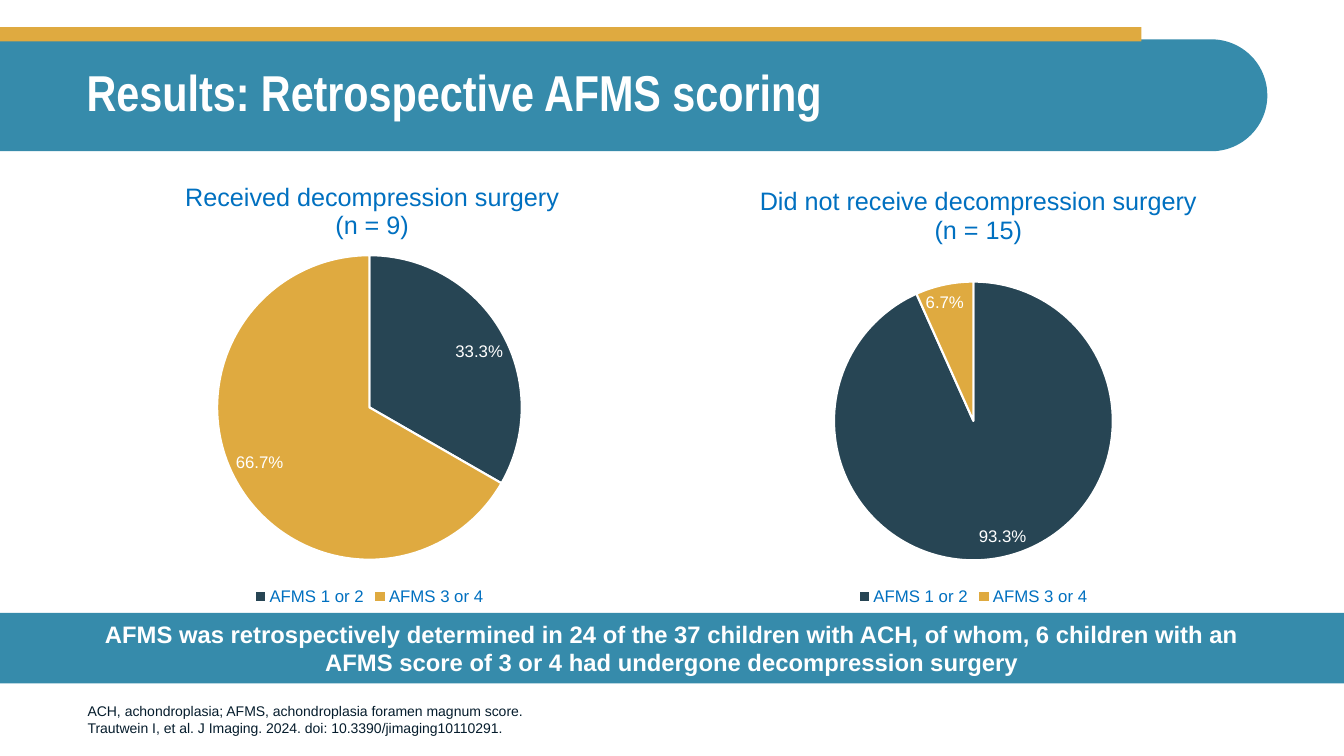
from lxml import etree
from pptx import Presentation
from pptx.chart.data import CategoryChartData
from pptx.dml.color import RGBColor
from pptx.enum import chart as charts, shapes, text
from pptx.oxml.ns import qn
from pptx.util import Pt

# Content
TITLE = "Results: Retrospective AFMS scoring"
CATS = ["AFMS 1 or 2", "AFMS 3 or 4"]
# left edge, title lines, values, title (x, y), pie (x, y, w, h) as shares of the chart
PIES = [
    (76, ["Received decompression surgery", "(n = 9)"], [0.333, 0.667],
     (0.18, 0.04), (0.24, 0.21, 0.52, 0.68)),
    (675, ["Did not receive decompression surgery", "(n = 15)"], [0.933, 0.067],
     (0.13, 0.05), (0.26, 0.27, 0.48, 0.62)),
]
BAND = ("AFMS was retrospectively determined in 24 of the 37 children with ACH, "
        "of whom, 6 children with an AFMS score of 3 or 4 had undergone "
        "decompression surgery")
NOTES = ["ACH, achondroplasia; AFMS, achondroplasia foramen magnum score.",
         "Trautwein I, et al. J Imaging. 2024. doi: 10.3390/jimaging10110291."]
TEAL, GOLD, NAVY = "368BAB", "DFAA40", "274554"
BLUE, INK, WHITE = "0070C0", "051C2C", "FFFFFF"

PX = 9144  # 100 px to the inch
WIDE, HIGH = 1333, 750

prs = Presentation()
prs.slide_width, prs.slide_height = WIDE * PX, HIGH * PX
slide = prs.slides.add_slide(prs.slide_layouts[6])


def rgb(color):
    return RGBColor.from_string(color)


def style(font, size, color, bold=False, face="Arial"):
    font.size, font.bold, font.name = Pt(size), bold, face
    font.color.rgb = rgb(color)


def block(kind, x, y, w, h, color):
    shape = slide.shapes.add_shape(kind, x * PX, y * PX, w * PX, h * PX)
    shape.shadow.inherit = False
    shape.fill.solid()
    shape.fill.fore_color.rgb = rgb(color)
    shape.line.fill.background()
    return shape


def write(frame, lines, size, color, bold=False, face="Arial", align="LEFT",
          anchor="MIDDLE", pad=10, spacing=1.0):
    frame.word_wrap = True
    frame.vertical_anchor = text.MSO_ANCHOR[anchor]
    frame.margin_left = frame.margin_right = pad * PX
    frame.margin_top = frame.margin_bottom = 5 * PX
    for i, line in enumerate(lines):
        para = frame.add_paragraph() if i else frame.paragraphs[0]
        para.text = line
        para.alignment = text.PP_ALIGN[align]
        para.line_spacing = spacing
        style(para.font, size, color, bold, face)


def box(x, y, w, h):
    return slide.shapes.add_textbox(x * PX, y * PX, w * PX, h * PX).text_frame


def place(node, inner=False, **share):
    """Fix a chart part at shares of the chart's width and height."""
    old = node.find(qn("c:layout"))
    if old is None:
        old = etree.Element(qn("c:layout"))
        tx = node.find(qn("c:tx"))
        node.insert(0 if tx is None else 1, old)
    manual = etree.SubElement(old, qn("c:manualLayout"))
    marks = [("layoutTarget", "inner")] if inner else []
    marks += [("xMode", "edge"), ("yMode", "edge"), *share.items()]
    for tag, val in marks:
        etree.SubElement(manual, qn("c:" + tag)).set("val", str(val))


def pie(x, lines, vals, head, area):
    data = CategoryChartData(number_format="0.0%")
    data.categories = CATS
    data.add_series("Series 1", vals)
    chart = slide.shapes.add_chart(charts.XL_CHART_TYPE.PIE, x * PX, 159 * PX,
                                   581 * PX, 446 * PX, data).chart
    style(chart.font, 10, INK)

    # Title
    frame = chart.chart_title.text_frame
    for i, line in enumerate(lines):
        para = frame.add_paragraph() if i else frame.paragraphs[0]
        run = para.add_run()
        run.text = line
        style(para.font, 18, BLUE)
        style(run.font, 18, BLUE)
    root = chart.element.chart
    place(root.find(qn("c:title")), **dict(zip("xy", head)))
    place(root.plotArea, True, **dict(zip("xywh", area)))

    # Legend
    chart.has_legend = True
    chart.legend.position = charts.XL_LEGEND_POSITION.BOTTOM
    chart.legend.include_in_layout = False
    style(chart.legend.font, 12, BLUE)

    # Slices and labels
    plot = chart.plots[0]
    plot.vary_by_categories = True
    for i, color in enumerate([NAVY, GOLD]):
        part = plot.series[0].points[i].format
        part.fill.solid()
        part.fill.fore_color.rgb = rgb(color)
        part.line.color.rgb = rgb(WHITE)
        part.line.width = Pt(1.5)
    tags = plot.series[0].data_labels
    tags.show_value = True
    tags.number_format, tags.number_format_is_linked = "0.0%", False
    tags.position = charts.XL_LABEL_POSITION.BEST_FIT
    style(tags.font, 12, WHITE)


# Header: a bar turned on its side, with its far end round
long, deep, top = 1257, 111, 39
bar = block(shapes.MSO_SHAPE.ROUND_2_SAME_RECTANGLE, (long - deep) // 2,
            top - (long - deep) // 2, deep, long, TEAL)
bar.adjustments[0], bar.adjustments[1] = 0, 0.5
bar.rotation = 270
block(shapes.MSO_SHAPE.RECTANGLE, 0, 27, 1132, 14, GOLD)
write(box(76, 39, 1181, 110), [TITLE], 36, WHITE, bold=True,
      face="Arial Narrow", spacing=0.9)

# Charts
for item in PIES:
    pie(*item)

# Footnote and message band
write(box(77, 671, 988, 64), NOTES, 10, INK, anchor="BOTTOM")
band = block(shapes.MSO_SHAPE.RECTANGLE, 0, 608, WIDE, 70, TEAL)
write(band.text_frame, [BAND], 17, WHITE, bold=True, align="CENTER", pad=79)

prs.save("out.pptx")
